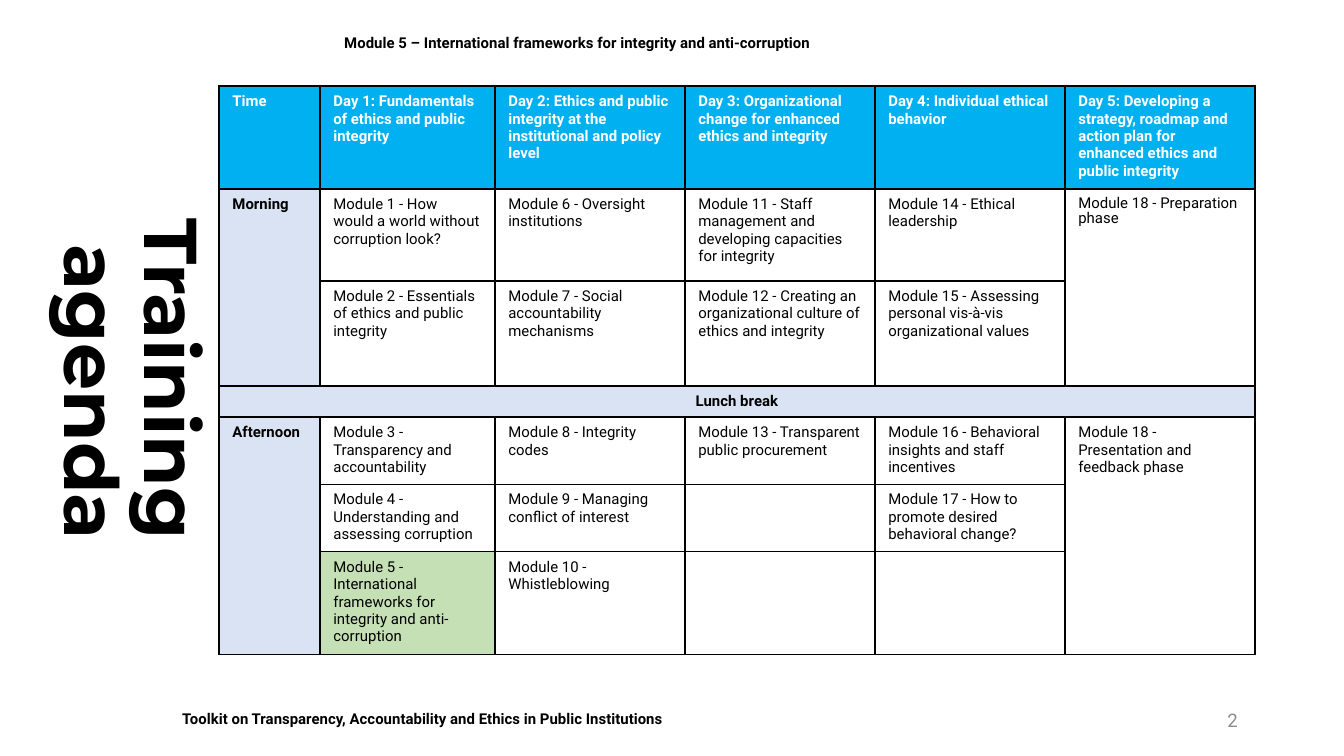
from lxml import etree
from pptx import Presentation
from pptx import util as u
from pptx.dml.color import RGBColor
from pptx.enum import shapes, text
from pptx.oxml import ns

SCALE = 6804
BLACK = RGBColor(0x00, 0x00, 0x00)
WHITE = RGBColor(0xFF, 0xFF, 0xFF)
GRAY = RGBColor(0x8C, 0x8C, 0x8C)
BLUE = RGBColor(0x00, 0xB0, 0xF0)
PALE_BLUE = RGBColor(0xDA, 0xE3, 0xF3)
GREEN = RGBColor(0xC5, 0xE0, 0xB4)

COLUMNS = [101, 175, 190, 190, 190, 190]
ROWS = [101, 92, 105, 31, 66, 66, 100]
HEADER, LUNCH = 0, 3
CURRENT_MODULE = (6, 1)
PREPARATION = (1, 5)
MERGES = [((1, 0), (2, 0)), ((1, 5), (2, 5)), ((3, 0), (3, 5)),
          ((4, 0), (6, 0)), ((4, 5), (6, 5))]
AGENDA = [
    ["Time",
     "Day 1: Fundamentals of ethics and public integrity",
     "Day 2: Ethics and public integrity at the institutional and policy level",
     "Day 3: Organizational change for enhanced ethics and integrity",
     "Day 4: Individual ethical behavior",
     "Day 5: Developing a strategy, roadmap and action plan for enhanced ethics and public integrity"],
    ["Morning",
     "Module 1 - How would a world without corruption look?",
     "Module 6 - Oversight institutions",
     "Module 11 - Staff management and developing capacities for integrity",
     "Module 14 - Ethical leadership",
     "Module 18 - Preparation phase"],
    ["",
     "Module 2 - Essentials of ethics and public integrity",
     "Module 7 - Social accountability mechanisms",
     "Module 12 - Creating an organizational culture of ethics and integrity",
     "Module 15 - Assessing personal vis-à-vis organizational values",
     ""],
    ["Lunch break", "", "", "", "", ""],
    ["Afternoon",
     "Module 3 - Transparency and accountability",
     "Module 8 - Integrity codes",
     "Module 13 - Transparent public procurement",
     "Module 16 - Behavioral insights and staff incentives",
     "Module 18 - Presentation and feedback phase"],
    ["",
     "Module 4 - Understanding and assessing corruption",
     "Module 9 - Managing conflict of interest",
     "",
     "Module 17 - How to promote desired behavioral change?",
     ""],
    ["",
     "Module 5 - International frameworks for integrity and anti-corruption",
     "Module 10 - Whistleblowing",
     "", "", ""],
]


def px(*lengths):
    """Turn px lengths into EMU."""
    return [u.Emu(length * SCALE) for length in lengths]


def write(frame, words, size=8, color=BLACK, bold=True, font="Roboto",
          align=text.PP_ALIGN.LEFT):
    """Fill a text frame with one formatted paragraph and return it."""
    frame.text = words
    para = frame.paragraphs[0]
    para.alignment = align
    for span in para.runs:
        span.font.name = font
        span.font.size = u.Pt(size)
        span.font.bold = bold
        span.font.color.rgb = color
    return para


def add_text(page, place, words, **style):
    """Add a vertically centred text box and return its shape."""
    box = page.shapes.add_textbox(*px(*place))
    box.text_frame.word_wrap = True
    box.text_frame.vertical_anchor = text.MSO_ANCHOR.MIDDLE
    write(box.text_frame, words, **style)
    return box


def add_title(page):
    """Add the sideways slide title."""
    box = add_text(page, (38, 86, 181, 467), "Training agenda", size=40,
                   font="Montserrat", align=text.PP_ALIGN.RIGHT)
    box.text_frame.paragraphs[0].line_spacing = 0.9
    box.text_frame._txBody.bodyPr.set("vert", "vert")


def add_footer(page):
    """Add the white footer bar."""
    bar = page.shapes.add_shape(shapes.MSO_SHAPE.RECTANGLE, *px(169, 703, 964, 32))
    bar.shadow.inherit = False
    bar.fill.solid()
    bar.fill.fore_color.rgb = WHITE
    bar.line.fill.background()
    bar.text_frame.word_wrap = True
    bar.text_frame.vertical_anchor = text.MSO_ANCHOR.TOP
    write(bar.text_frame,
          "Toolkit on Transparency, Accountability and Ethics in Public Institutions")


def add_borders(cell):
    """Draw a black line on every side of a cell."""
    props = cell._tc.get_or_add_tcPr()
    for side in ("a:lnL", "a:lnR", "a:lnT", "a:lnB"):
        line = etree.SubElement(props, ns.qn(side), w=str(u.Pt(1)))
        fill = etree.SubElement(line, ns.qn("a:solidFill"))
        etree.SubElement(fill, ns.qn("a:srgbClr"), val=str(BLACK))


def cell_fill(row, column):
    """Return the fill colour of a cell, or None."""
    if row == HEADER:
        return BLUE
    if column == 0 or row == LUNCH:
        return PALE_BLUE
    return GREEN if (row, column) == CURRENT_MODULE else None


def add_agenda(page):
    """Add the five-day agenda table."""
    place = px(219, 86, sum(COLUMNS), sum(ROWS))
    table = page.shapes.add_table(len(ROWS), len(COLUMNS), *place).table
    table.horz_banding = False
    for column, width in zip(table.columns, px(*COLUMNS)):
        column.width = width
    for row, height in zip(table.rows, px(*ROWS)):
        row.height = height
    for r, entries in enumerate(AGENDA):
        for c, words in enumerate(entries):
            cell = table.cell(r, c)
            add_borders(cell)
            color = cell_fill(r, c)
            if color is None:
                cell.fill.background()
            else:
                cell.fill.solid()
                cell.fill.fore_color.rgb = color
            para = write(cell.text_frame, words,
                         color=WHITE if r == HEADER else BLACK,
                         bold=r == HEADER or c == 0,
                         align=text.PP_ALIGN.CENTER if r == LUNCH else text.PP_ALIGN.LEFT)
            if (r, c) == PREPARATION:
                para.line_spacing = 0.9
    for first, last in MERGES:
        table.cell(*first).merge(table.cell(*last))


def main():
    """Build the training agenda slide."""
    deck = Presentation()
    deck.slide_width, deck.slide_height = px(1344, 756)
    page = deck.slides.add_slide(deck.slide_layouts[6])
    add_footer(page)
    add_title(page)
    add_text(page, (949, 700, 302, 40), "2", size=10, color=GRAY, bold=False,
             align=text.PP_ALIGN.RIGHT)
    add_text(page, (331, 13, 921, 59),
             "Module 5 – International frameworks for integrity and anti-corruption")
    add_agenda(page)
    deck.save("out.pptx")


if __name__ == "__main__":
    main()
